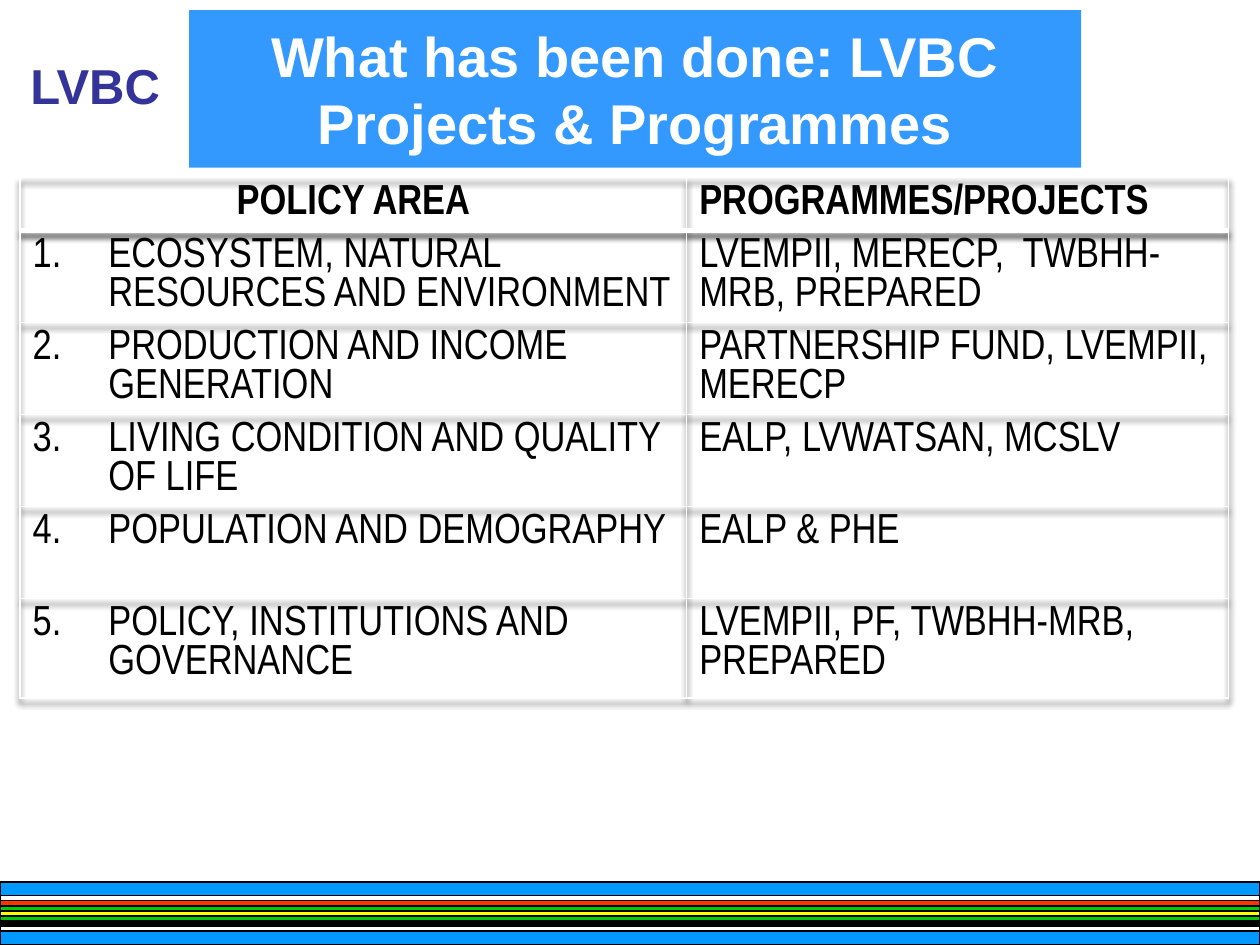
from lxml import etree
from pptx import Presentation
from pptx.dml.color import RGBColor
from pptx.enum.shapes import MSO_SHAPE
from pptx.enum.text import MSO_ANCHOR, PP_ALIGN
from pptx.oxml import parse_xml
from pptx.util import Inches, Pt

RECT = MSO_SHAPE.RECTANGLE
MIDDLE = MSO_ANCHOR.MIDDLE
LEFT, CENTER = PP_ALIGN.LEFT, PP_ALIGN.CENTER

WHITE = RGBColor(0xFF, 0xFF, 0xFF)
BLACK = RGBColor(0x00, 0x00, 0x00)
BLUE = RGBColor(0x00, 0x99, 0xFF)
GREEN = RGBColor(0x00, 0xCC, 0x00)
YELLOW = RGBColor(0xFF, 0xFF, 0x00)
RED = RGBColor(0xFF, 0x33, 0x00)
TITLE_BLUE = RGBColor(0x33, 0x99, 0xFF)
NAVY = RGBColor(0x33, 0x33, 0x99)

A = "http://schemas.openxmlformats.org/drawingml/2006/main"


def write(tf, text, size=24, font="Arial Narrow", color=BLACK, bold=False,
          align=LEFT, spacing=None, number=None):
    """Fill a text frame; number makes it an item of a numbered list."""
    p = tf.paragraphs[0]
    p.alignment = align
    if spacing:
        p.line_spacing = Pt(spacing)
    if number:
        pPr = p._p.get_or_add_pPr()
        pPr.set("marL", str(Inches(0.6)))
        pPr.set("indent", str(Inches(-0.6)))
        etree.SubElement(pPr, f"{{{A}}}buAutoNum", type="arabicPeriod",
                         startAt=str(number))
    r = p.add_run()
    r.text = text
    r.font.size, r.font.name, r.font.bold = Pt(size), font, bold
    r.font.color.rgb = color


def set_borders(cell, bottom):
    """Give a cell white borders, 1 pt except for the bottom one."""
    tcPr = cell._tc.get_or_add_tcPr()
    widths = {"lnL": 1, "lnR": 1, "lnT": 1, "lnB": bottom}
    for i, (tag, width) in enumerate(widths.items()):
        tcPr.insert(i, parse_xml(
            f'<a:{tag} xmlns:a="{A}" w="{Pt(width)}"><a:solidFill>'
            f'<a:srgbClr val="{WHITE}"/></a:solidFill></a:{tag}>'))


prs = Presentation()
prs.slide_width, prs.slide_height = Inches(10), Inches(7.5)
s = prs.slides.add_slide(prs.slide_layouts[6])

# Footer stripes, from top to bottom
thick, thin = 0.11, 0.04
stripes = [(BLUE, thick), (WHITE, thin), (RED, thin), (GREEN, thin),
           (YELLOW, thin), (GREEN, thin), (BLACK, thin), (WHITE, thin),
           (BLUE, thick)]
top = 7
for color, height in stripes:
    sp = s.shapes.add_shape(RECT, 0, Inches(top), Inches(10), Inches(height))
    sp.shadow.inherit = False
    sp.fill.solid()
    sp.fill.fore_color.rgb = color
    sp.line.color.rgb = BLACK
    sp.line.width = Pt(0.75)
    top += height

# Header
label = s.shapes.add_textbox(Inches(0.09), Inches(0.56), Inches(1.33), Inches(0.23))
label.text_frame.word_wrap = False
label.text_frame.vertical_anchor = MIDDLE
write(label.text_frame, "LVBC", size=28, font="Arial", color=NAVY, bold=True,
      align=CENTER)

title = s.shapes.add_shape(RECT, Inches(1.5), Inches(0.08), Inches(7.08), Inches(1.25))
title.shadow.inherit = False
title.fill.solid()
title.fill.fore_color.rgb = TITLE_BLUE
title.line.fill.background()
title.text_frame.word_wrap = True
title.text_frame.vertical_anchor = MIDDLE
write(title.text_frame, "What has been done: LVBC Projects & Programmes", size=32,
      font="Arial", color=WHITE, bold=True, align=CENTER)

# Table
rows = [
    ("POLICY AREA", "PROGRAMMES/PROJECTS"),
    ("ECOSYSTEM, NATURAL RESOURCES AND ENVIRONMENT",
     "LVEMPII, MERECP,  TWBHH-MRB, PREPARED"),
    ("PRODUCTION AND INCOME GENERATION", "PARTNERSHIP FUND, LVEMPII, MERECP"),
    ("LIVING CONDITION AND QUALITY OF LIFE", "EALP, LVWATSAN, MCSLV"),
    ("POPULATION AND DEMOGRAPHY", "EALP & PHE"),
    ("POLICY, INSTITUTIONS AND GOVERNANCE", "LVEMPII, PF, TWBHH-MRB, PREPARED"),
]
row_heights = [0.42] + [0.73] * 4 + [0.79]
col_widths = [5.29, 4.3]
table = s.shapes.add_table(len(rows), 2, Inches(0.16), Inches(1.41),
                           Inches(sum(col_widths)), Inches(sum(row_heights))).table
table.horz_banding = False
table._tbl.tblPr.insert(0, parse_xml(
    f'<a:effectLst xmlns:a="{A}"><a:outerShdw blurRad="{Pt(3)}" dist="{Pt(3)}" '
    f'dir="5400000" rotWithShape="0"><a:srgbClr val="{BLACK}">'
    '<a:alpha val="75000"/></a:srgbClr></a:outerShdw></a:effectLst>'))
for col, width in zip(table.columns, col_widths):
    col.width = Inches(width)
for i, (row, height) in enumerate(zip(rows, row_heights)):
    table.rows[i].height = Inches(height)
    header = i == 0
    for j, text in enumerate(row):
        first = j == 0
        cell = table.cell(i, j)
        cell.fill.background()
        set_borders(cell, bottom=3 if header else 1)
        write(cell.text_frame, text, bold=header, spacing=22.5,
              align=CENTER if header and first else LEFT,
              number=i if first else None)

prs.save("out.pptx")
